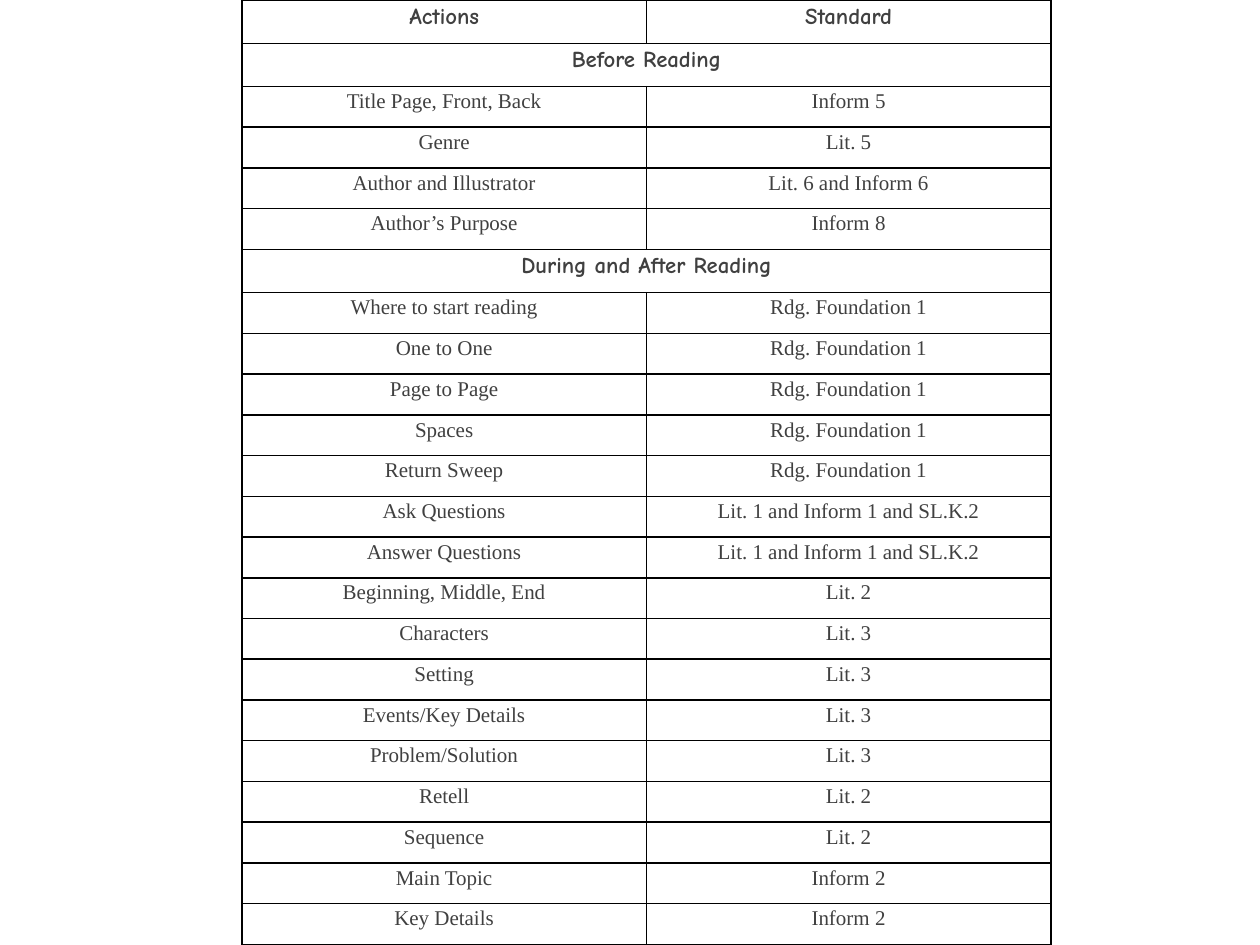
from dataclasses import dataclass
from typing import Optional

from lxml.etree import SubElement
from pptx import Presentation
from pptx.dml.color import RGBColor
from pptx.enum.text import MSO_ANCHOR, PP_ALIGN
from pptx.oxml.ns import qn
from pptx.util import Inches, Pt


@dataclass(frozen=True)
class Theme:
    ink: RGBColor = RGBColor(0x40, 0x40, 0x40)
    border: str = "000000"
    border_width: int = Pt(1)
    heading_font: str = "Comic Neue"
    heading_size: int = Pt(13)
    body_font: str = "Times New Roman"
    body_size: int = Pt(12)
    line_spacing: float = 1.15
    side_margin: int = Inches(0.06)


@dataclass(frozen=True)
class Row:
    action: str
    standard: Optional[str] = None  # None: the action spans both columns
    heading: bool = False

    @property
    def units(self) -> int:
        """Relative height of the row."""
        return 17 if self.heading else 16


THEME = Theme()
WIDTH, HEIGHT = Inches(10), Inches(7.5)
LEFT, COLUMN = 0.192, 0.321  # shares of the slide width

ROWS = [
    Row("Actions", "Standard", heading=True),
    Row("Before Reading", heading=True),
    Row("Title Page, Front, Back", "Inform 5"),
    Row("Genre", "Lit. 5"),
    Row("Author and Illustrator", "Lit. 6 and Inform 6"),
    Row("Author’s Purpose", "Inform 8"),
    Row("During and After Reading", heading=True),
    Row("Where to start reading", "Rdg. Foundation 1"),
    Row("One to One", "Rdg. Foundation 1"),
    Row("Page to Page", "Rdg. Foundation 1"),
    Row("Spaces", "Rdg. Foundation 1"),
    Row("Return Sweep", "Rdg. Foundation 1"),
    Row("Ask Questions", "Lit. 1 and Inform 1 and SL.K.2"),
    Row("Answer Questions", "Lit. 1 and Inform 1 and SL.K.2"),
    Row("Beginning, Middle, End", "Lit. 2"),
    Row("Characters", "Lit. 3"),
    Row("Setting", "Lit. 3"),
    Row("Events/Key Details", "Lit. 3"),
    Row("Problem/Solution", "Lit. 3"),
    Row("Retell", "Lit. 2"),
    Row("Sequence", "Lit. 2"),
    Row("Main Topic", "Inform 2"),
    Row("Key Details", "Inform 2"),
]


def set_attrs(target, values: dict) -> None:
    for name, value in values.items():
        setattr(target, name, value)


def format_cell(cell) -> None:
    """Margins, borders on all four sides and no fill."""
    set_attrs(cell, dict(
        margin_left=THEME.side_margin, margin_right=THEME.side_margin,
        margin_top=0, margin_bottom=0, vertical_anchor=MSO_ANCHOR.TOP))
    tc_pr = cell._tc.get_or_add_tcPr()
    for side in ("a:lnL", "a:lnR", "a:lnT", "a:lnB"):
        ln = SubElement(tc_pr, qn(side), w=str(THEME.border_width))
        fill = SubElement(ln, qn("a:solidFill"))
        SubElement(fill, qn("a:srgbClr"), val=THEME.border)
    cell.fill.background()


def write_cell(cell, text: str, heading: bool) -> None:
    p = cell.text_frame.paragraphs[0]
    set_attrs(p, dict(alignment=PP_ALIGN.CENTER,
                      line_spacing=THEME.line_spacing))
    r = p.add_run()
    r.text = text
    set_attrs(r.font, dict(
        name=THEME.heading_font if heading else THEME.body_font,
        size=THEME.heading_size if heading else THEME.body_size,
        bold=heading))
    r.font.color.rgb = THEME.ink


def add_standards_table(s, rows: list[Row]) -> None:
    column = int(WIDTH * COLUMN)
    table = s.shapes.add_table(
        len(rows), 2, int(WIDTH * LEFT), 0, 2 * column, HEIGHT).table
    set_attrs(table, dict(first_row=False, horz_banding=False))
    for col in table.columns:
        col.width = column

    # Row heights share the full slide height
    unit = HEIGHT / sum(row.units for row in rows)
    for i, row in enumerate(rows):
        table.rows[i].height = int(unit * row.units)
        left, right = table.cell(i, 0), table.cell(i, 1)
        for cell in (left, right):
            format_cell(cell)
        write_cell(left, row.action, row.heading)
        if row.standard is None:
            left.merge(right)
        else:
            write_cell(right, row.standard, row.heading)


def main() -> None:
    prs = Presentation()
    set_attrs(prs, dict(slide_width=WIDTH, slide_height=HEIGHT))
    s = prs.slides.add_slide(prs.slide_layouts[6])
    add_standards_table(s, ROWS)
    prs.save("out.pptx")


if __name__ == "__main__":
    main()
